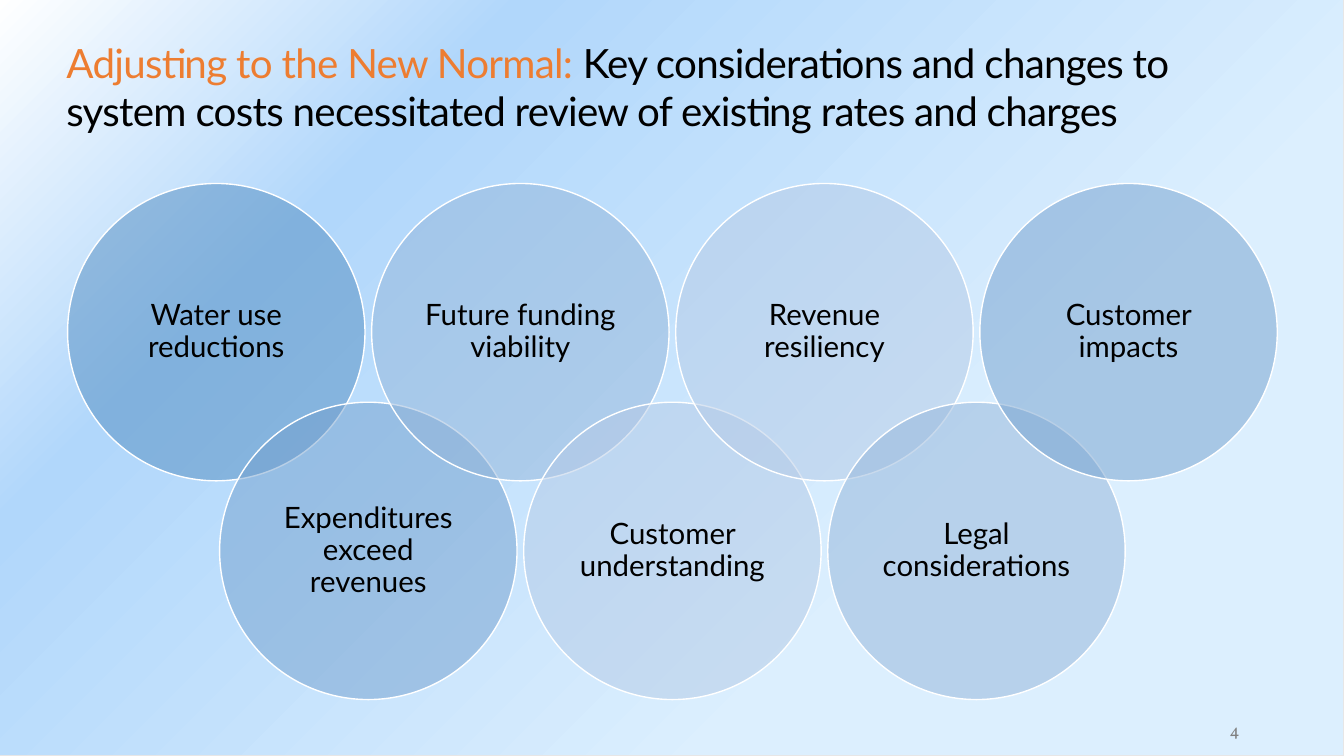
from lxml import etree
from pptx import Presentation
from pptx import util as u
from pptx.dml.color import RGBColor
from pptx.enum import shapes, text
from pptx.oxml import parse_xml
from pptx.oxml.ns import nsdecls, qn

ORANGE = RGBColor(0xED, 0x7D, 0x31)
BLACK = RGBColor(0x00, 0x00, 0x00)
WHITE = RGBColor(0xFF, 0xFF, 0xFF)
GREY = RGBColor(0x80, 0x80, 0x80)
PALE_GREY = RGBColor(0xE7, 0xE6, 0xE6)
# Circle shades, from dark to light
DEEP = RGBColor(0x53, 0x8D, 0xC1)
STRONG = RGBColor(0x73, 0xA0, 0xCE)
MEDIUM = RGBColor(0x93, 0xB5, 0xDA)
LIGHT = RGBColor(0xB4, 0xCA, 0xE6)
# Backdrop glow, as position in percent and colour
GLOW = [(0, RGBColor(0xDC, 0xEF, 0xFE)), (30, RGBColor(0xDC, 0xEF, 0xFE)),
        (75, RGBColor(0xB1, 0xD7, 0xFB)), (100, WHITE)]

# Circle grid in inches: neighbours alternate between two rows
GRID_LEFT, GRID_TOP = 0.67, 1.82
COLUMN, ROW, DIAMETER = 1.508, 2.17, 2.95

CONSIDERATIONS = [
    ("Water use reductions", DEEP),
    ("Expenditures exceed revenues", STRONG),
    ("Future funding viability", MEDIUM),
    ("Customer understanding", LIGHT),
    ("Revenue resiliency", LIGHT),
    ("Legal considerations", MEDIUM),
    ("Customer impacts", STRONG),
]


class ConsiderationsSlide:
    font = "Lato"

    def __init__(self, deck):
        self.slide = deck.slides.add_slide(deck.slide_layouts[6])

    def style(self, run, size, color, font=None):
        run.font.name = font or self.font
        run.font.size = u.Pt(size)
        run.font.color.rgb = color

    def shape(self, kind, box, line, weight):
        shape = self.slide.shapes.add_shape(kind, *map(u.Inches, box))
        shape.shadow.inherit = False
        shape.line.color.rgb = line
        shape.line.width = u.Pt(weight)
        return shape

    def text_box(self, box, inset_x, inset_y):
        frame = self.slide.shapes.add_textbox(*map(u.Inches, box)).text_frame
        frame.word_wrap = True
        frame.margin_left = frame.margin_right = u.Inches(inset_x)
        frame.margin_top = frame.margin_bottom = u.Inches(inset_y)
        return frame

    def backdrop(self, box):
        panel = self.shape(shapes.MSO_SHAPE.RECTANGLE, box, PALE_GREY, 0.75)
        panel.fill.background()
        stops = "".join(f'<a:gs pos="{at * 1000}"><a:srgbClr val="{color}"/></a:gs>'
                        for at, color in GLOW)
        glow = parse_xml(
            f'<a:gradFill {nsdecls("a")} rotWithShape="1"><a:gsLst>{stops}</a:gsLst>'
            '<a:path path="circle"><a:fillToRect l="100000" t="100000"/></a:path>'
            '</a:gradFill>')
        properties = panel.element.spPr
        properties.replace(properties.find(qn("a:noFill")), glow)

    def title(self, box, parts):
        heading = self.text_box(box, 0.1, 0.05).paragraphs[0]
        heading.text = ""
        for words, color in parts:
            run = heading.add_run()
            run.text = words
            self.style(run, 28.8, color)
            run.font._element.set("spc", "-50")

    def circle(self, column, row, label, color):
        box = (GRID_LEFT + column * COLUMN, GRID_TOP + row * ROW, DIAMETER, DIAMETER)
        circle = self.shape(shapes.MSO_SHAPE.OVAL, box, WHITE, 1)
        circle.fill.solid()
        circle.fill.fore_color.rgb = color
        tint = circle.element.spPr.find(qn("a:solidFill"))[0]
        etree.SubElement(tint, qn("a:alpha"), val="50000")
        frame = circle.text_frame
        frame.word_wrap = True
        frame.vertical_anchor = text.MSO_ANCHOR.MIDDLE
        frame.margin_left = frame.margin_right = u.Inches(0.09)
        frame.margin_top = frame.margin_bottom = u.Inches(0.09)
        frame.text = label
        caption = frame.paragraphs[0]
        caption.alignment = text.PP_ALIGN.CENTER
        caption.line_spacing = 0.9
        self.style(caption.runs[0], 21, BLACK)

    def page_number(self, box, number):
        frame = self.text_box(box, 0.05, 0.05)
        frame.vertical_anchor = text.MSO_ANCHOR.BOTTOM
        frame.text = number
        frame.paragraphs[0].alignment = text.PP_ALIGN.CENTER
        self.style(frame.paragraphs[0].runs[0], 12, GREY, "Vollkorn")


def main():
    deck = Presentation()
    deck.slide_width, deck.slide_height = u.Inches(13.33), u.Inches(7.5)
    page = ConsiderationsSlide(deck)

    # Backdrop and page number
    page.backdrop((-0.02, 0, 13.35, 7.5))
    page.page_number((11.79, 7.09, 0.91, 0.3), "4")

    # Title
    page.title((0.56, 0.33, 12.22, 1.17), [
        ("Adjusting to the New Normal: ", ORANGE),
        ("Key considerations and changes to system costs necessitated "
         "review of existing rates and charges", BLACK)])

    # Overlapping circles
    for column, (label, color) in enumerate(CONSIDERATIONS):
        page.circle(column, column % 2, label, color)

    deck.save("out.pptx")


if __name__ == "__main__":
    main()
